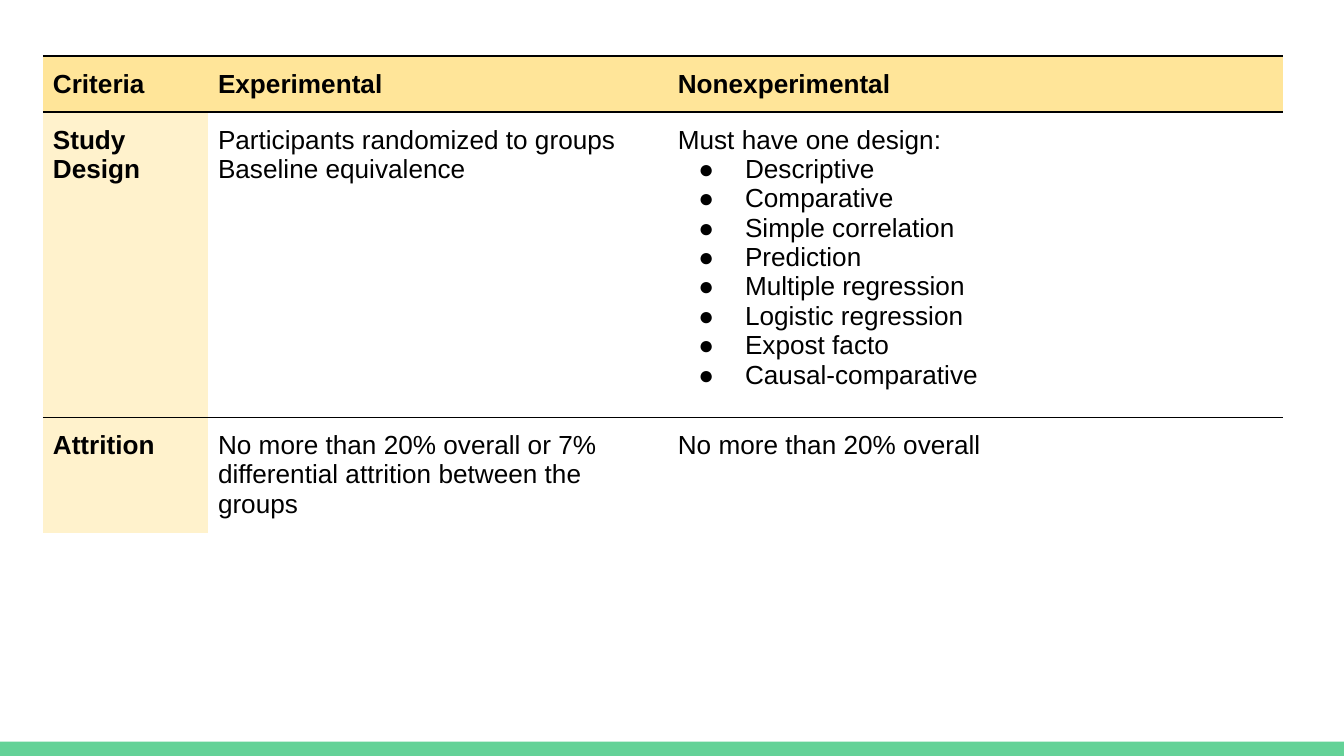
"""Build a slide comparing criteria for experimental and nonexperimental studies."""
from lxml.etree import SubElement
from pptx import Presentation
from pptx.dml.color import RGBColor
from pptx.enum.shapes import MSO_SHAPE as SHAPE
from pptx.oxml.ns import qn
from pptx.util import Cm, Pt


def paint(fill, color):
    fill.solid()
    fill.fore_color.rgb = RGBColor.from_string(color)


def border(cell, side, color=None):
    ln = SubElement(cell._tc.get_or_add_tcPr(), qn(f"a:ln{side}"), w=str(Pt(1)))
    if color:
        SubElement(SubElement(ln, qn("a:solidFill")), qn("a:srgbClr"), val=color)
    else:
        SubElement(ln, qn("a:noFill"))


BLACK = "000000"
DESIGNS = ["Descriptive", "Comparative", "Simple correlation", "Prediction",
           "Multiple regression", "Logistic regression", "Expost facto",
           "Causal-comparative"]
ROWS = [
    [["Criteria"], ["Experimental"], ["Nonexperimental"]],
    [["Study Design"],
     ["Participants randomized to groups", "Baseline equivalence"],
     ["Must have one design:"] + DESIGNS],
    [["Attrition"],
     ["No more than 20% overall or 7% differential attrition between the groups"],
     ["No more than 20% overall"]],
]
COL_WIDTHS = [3.12, 8.69, 11.63]
ROW_HEIGHTS = [1.06, 5.77, 2.18]
LINED_SIDES = ["TB", "TB", "T"]

prs = Presentation()
prs.slide_width, prs.slide_height = Cm(25.4), Cm(14.29)
s = prs.slides.add_slide(prs.slide_layouts[6])

bar = s.shapes.add_shape(SHAPE.RECTANGLE, 0, Cm(14.02), Cm(25.4), Cm(0.27))
bar.shadow.inherit = False
paint(bar.fill, "63D297")
bar.line.fill.background()

table = s.shapes.add_table(3, 3, Cm(0.81), Cm(1.06),
                           Cm(sum(COL_WIDTHS)), Cm(sum(ROW_HEIGHTS))).table
table.first_row = table.horz_banding = False
for col, width in zip(table.columns, COL_WIDTHS):
    col.width = Cm(width)

for i, (row, height) in enumerate(zip(table.rows, ROW_HEIGHTS)):
    row.height = Cm(height)
    for j, cell in enumerate(row.cells):
        for side in "LRTB":
            border(cell, side, BLACK if side in LINED_SIDES[i] else None)
        if i == 0:
            paint(cell.fill, "FFE599")
        elif j == 0:
            paint(cell.fill, "FFF2CC")
        else:
            cell.fill.background()
        cell.margin_left = cell.margin_right = Cm(0.19)
        cell.margin_top = cell.margin_bottom = Cm(0.25)

        tf = cell.text_frame
        for n, text in enumerate(ROWS[i][j]):
            p = tf.add_paragraph() if n else tf.paragraphs[0]
            r = p.add_run()
            r.text = text
            r.font.name, r.font.size = "Arial", Pt(14)
            r.font.bold = i == 0 or j == 0
            r.font.color.rgb = RGBColor.from_string(BLACK)
            if text in DESIGNS:
                pPr = p._p.get_or_add_pPr()
                pPr.set("marL", str(Cm(1.27)))
                pPr.set("indent", str(Cm(-0.88)))
                SubElement(SubElement(pPr, qn("a:buClr")), qn("a:srgbClr"), val=BLACK)
                SubElement(pPr, qn("a:buFont"), typeface="Arial")
                SubElement(pPr, qn("a:buChar"), char="●")

prs.save("out.pptx")
